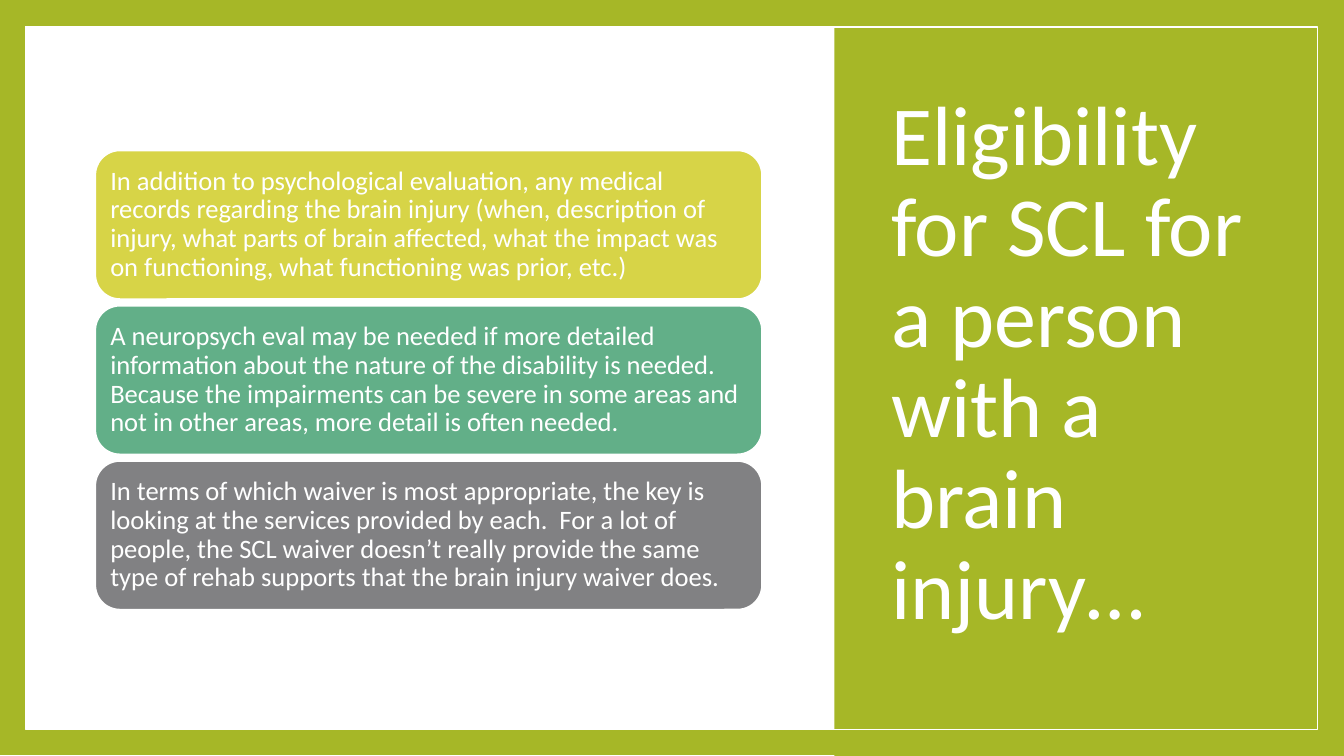
"""Build the slide on SCL eligibility for a person with a brain injury."""
from pptx import Presentation
from pptx.dml.color import RGBColor
from pptx.enum.shapes import MSO_SHAPE
from pptx.enum.text import MSO_ANCHOR, MSO_AUTO_SIZE, PP_ALIGN
from pptx.util import Pt

RECT, ROUNDED = MSO_SHAPE.RECTANGLE, MSO_SHAPE.ROUNDED_RECTANGLE
MIDDLE, LEFT, NO_FIT = MSO_ANCHOR.MIDDLE, PP_ALIGN.LEFT, MSO_AUTO_SIZE.NONE

WIDTH, HEIGHT = 960, 540
WHITE, GREEN = "FFFFFF", "A6B727"
FONT = "Calibri"
TITLE = "Eligibility for SCL for a person with a brain injury…"
TITLE_BOX = (629.28, 48.24, 281.52, 425.52)
CARDS = [
    ("D7D447", "In addition to psychological evaluation, any medical records "
     "regarding the brain injury (when, description of injury, what parts of "
     "brain affected, what the impact was on functioning, what functioning "
     "was prior, etc.)"),
    ("62AF88", "A neuropsych eval may be needed if more detailed information "
     "about the nature of the disability is needed.  Because the impairments "
     "can be severe in some areas and not in other areas, more detail is "
     "often needed."),
    ("818183", "In terms of which waiver is most appropriate, the key is "
     "looking at the services provided by each.  For a lot of people, the SCL "
     "waiver doesn’t really provide the same type of rehab supports that the "
     "brain injury waiver does."),
]
CARD_LEFT, CARD_TOP, CARD_W, CARD_H, CARD_GAP = 67.9, 107.3, 476.6, 106.5, 4.4
INSET = 5.7
BACKDROP = [
    ((0, -0.72, WIDTH, HEIGHT), GREEN, None),
    ((18, 18.72, 923, 502), WHITE, None),
    ((596, 0, 364, HEIGHT), GREEN, None),
    ((18, 19.3, 923, 502), None, 1),
]


def color(value):
    return RGBColor.from_string(value)


def add_box(s, kind, box, fill, line_width):
    sp = s.shapes.add_shape(kind, *map(Pt, box))
    sp.shadow.inherit = False
    if fill:
        sp.fill.solid()
        sp.fill.fore_color.rgb = color(fill)
    else:
        sp.fill.background()
    if line_width:
        sp.line.color.rgb = color(WHITE)
        sp.line.width = Pt(line_width)
    else:
        sp.line.fill.background()
    return sp


def write(sp, text, size):
    tf = sp.text_frame
    tf.text = text
    tf.word_wrap = True
    tf.auto_size = NO_FIT
    tf.vertical_anchor = MIDDLE
    p = tf.paragraphs[0]
    p.alignment = LEFT
    p.line_spacing = 0.9
    p.font.name = FONT
    p.font.size = Pt(size)
    p.font.color.rgb = color(WHITE)
    return tf


def main():
    prs = Presentation()
    prs.slide_width, prs.slide_height = Pt(WIDTH), Pt(HEIGHT)
    s = prs.slides.add_slide(prs.slide_layouts[5])

    for box, fill, line_width in BACKDROP:
        add_box(s, RECT, box, fill, line_width)

    title = s.shapes.title
    title.left, title.top, title.width, title.height = map(Pt, TITLE_BOX)
    write(title, TITLE, 60)
    title.element.getparent().append(title.element)

    for i, (fill, text) in enumerate(CARDS):
        top = CARD_TOP + i * (CARD_H + CARD_GAP)
        sp = add_box(s, ROUNDED, (CARD_LEFT, top, CARD_W, CARD_H), fill, 1.5)
        tf = write(sp, text, 19)
        tf.margin_left = tf.margin_right = Pt(INSET)
        tf.margin_top = tf.margin_bottom = Pt(INSET)

    prs.save("out.pptx")


if __name__ == "__main__":
    main()
